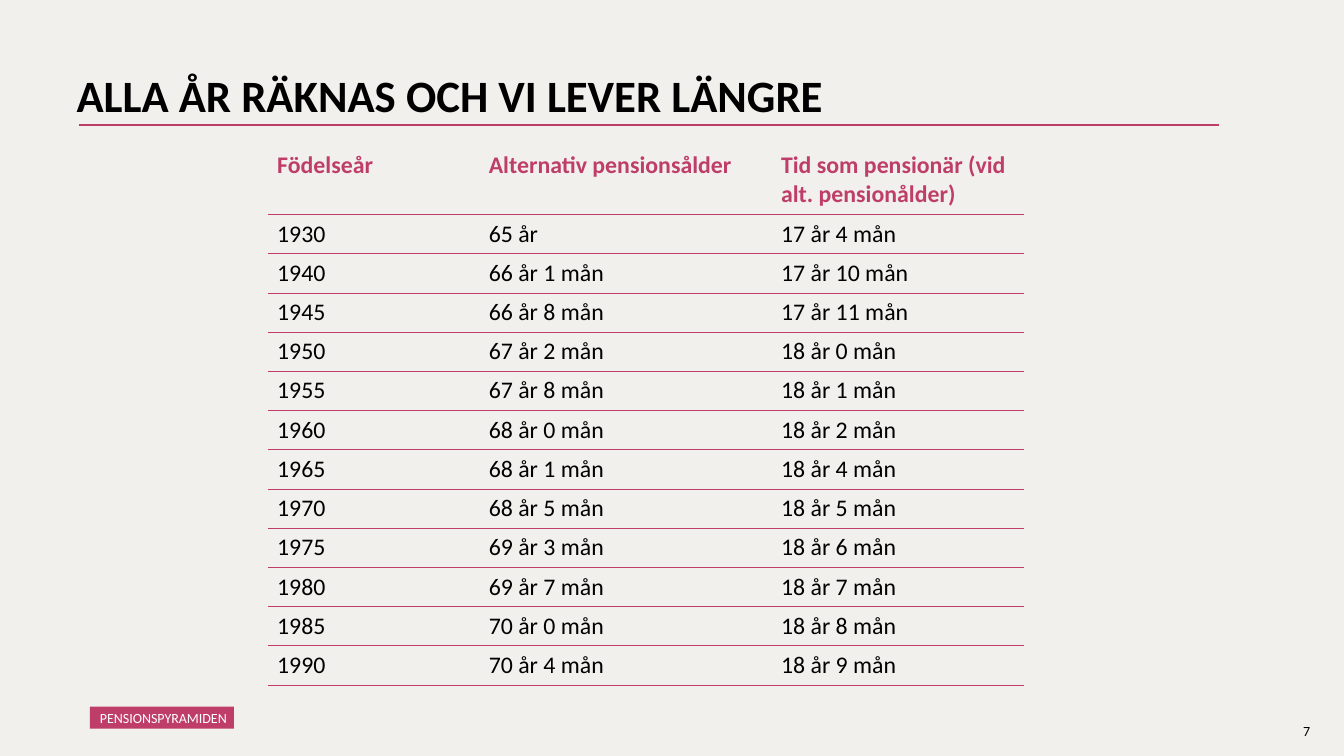
import dataclasses
import typing

import lxml.etree
import pptx
import pptx.dml.color
import pptx.enum.shapes
import pptx.enum.text
import pptx.oxml.ns
import pptx.util

WIDE = pptx.util.Inches(13.333)
HIGH = pptx.util.Inches(7.5)


@dataclasses.dataclass(frozen=True)
class Theme:
    font: str = "Calibri"
    back: str = "F1F0EC"
    rose: str = "BE3E69"
    black: str = "000000"
    white: str = "FFFFFF"
    title: int = 32
    cell: int = 17
    small: int = 10


@dataclasses.dataclass(frozen=True)
class Box:
    """A place on the slide, in percent of its width and height."""
    left: float
    top: float
    width: float
    height: float


@dataclasses.dataclass(frozen=True)
class Label:
    text: str
    box: Box
    size: int
    color: str
    bold: bool = False
    space: float = 1.0
    inset: tuple[float, float, float, float] = (0.1, 0.05, 0.1, 0.05)
    middle: bool = False


class Row(typing.NamedTuple):
    born: str
    age: str
    time: str


THEME = Theme()
TITLE = Label("ALLA ÅR RÄKNAS OCH VI LEVER LÄNGRE", Box(4.95, 9.07, 86.25, 19.33),
              THEME.title, THEME.black, bold=True, space=0.9)
TAG = Label("PENSIONSPYRAMIDEN", Box(6.68, 93.47, 10.73, 2.93), THEME.small,
            THEME.white, space=0.9, inset=(0.1, 0.08, 0.04, 0.05), middle=True)
PAGE = Label("7", Box(96.23, 94.93, 3, 3.6), THEME.small, THEME.black)
RULE = Box(5.85, 16.53, 84.83, 0)
GRID = Box(19.95, 19.33, 56.25, 70.2)
COLS = (15.75, 21.75, 18.75)
HEAD_ROW, BODY_ROW = 9, 5.1
ROWS = (
    Row("Födelseår", "Alternativ pensionsålder", "Tid som pensionär (vid alt. pensionålder)"),
    Row("1930", "65 år", "17 år 4 mån"),
    Row("1940", "66 år 1 mån", "17 år 10 mån"),
    Row("1945", "66 år 8 mån", "17 år 11 mån"),
    Row("1950", "67 år 2 mån", "18 år 0 mån"),
    Row("1955", "67 år 8 mån", "18 år 1 mån"),
    Row("1960", "68 år 0 mån", "18 år 2 mån"),
    Row("1965", "68 år 1 mån", "18 år 4 mån"),
    Row("1970", "68 år 5 mån", "18 år 5 mån"),
    Row("1975", "69 år 3 mån", "18 år 6 mån"),
    Row("1980", "69 år 7 mån", "18 år 7 mån"),
    Row("1985", "70 år 0 mån", "18 år 8 mån"),
    Row("1990", "70 år 4 mån", "18 år 9 mån"),
)


def rgb(color: str) -> pptx.dml.color.RGBColor:
    return pptx.dml.color.RGBColor.from_string(color)


def across(share: float) -> int:
    return round(WIDE * share / 100)


def down(share: float) -> int:
    return round(HIGH * share / 100)


def place(box: Box) -> tuple[int, int, int, int]:
    return across(box.left), down(box.top), across(box.width), down(box.height)


def style(para, size: int, color: str, bold: bool) -> None:
    para.alignment = pptx.enum.text.PP_ALIGN.LEFT
    para.font.name = THEME.font
    para.font.size = pptx.util.Pt(size)
    para.font.bold = bold
    para.font.color.rgb = rgb(color)


def write(shape, label: Label) -> None:
    shape.left, shape.top, shape.width, shape.height = place(label.box)
    frame = shape.text_frame
    frame.text = label.text
    frame.word_wrap = True
    frame.auto_size = pptx.enum.text.MSO_AUTO_SIZE.NONE
    anchor = pptx.enum.text.MSO_ANCHOR
    frame.vertical_anchor = anchor.MIDDLE if label.middle else anchor.TOP
    (frame.margin_left, frame.margin_top, frame.margin_right,
     frame.margin_bottom) = map(pptx.util.Inches, label.inset)
    para = frame.paragraphs[0]
    props = para._p.get_or_add_pPr()
    props.set("marL", "0")
    props.set("indent", "0")
    lxml.etree.SubElement(props, pptx.oxml.ns.qn("a:buNone"))
    para.line_spacing = label.space
    para.space_before = pptx.util.Pt(0)
    style(para, label.size, label.color, label.bold)


def edge(cell, side: str, width: float) -> None:
    """Add one cell border; a width of 0 hides it."""
    name = pptx.oxml.ns.qn
    props = cell._tc.get_or_add_tcPr()
    line = lxml.etree.Element(name(f"a:ln{side}"), w=str(pptx.util.Pt(width)))
    if width:
        fill = lxml.etree.SubElement(line, name("a:solidFill"))
        lxml.etree.SubElement(fill, name("a:srgbClr"), val=THEME.rose)
    else:
        lxml.etree.SubElement(line, name("a:noFill"))
    props.insert("LRTB".index(side), line)


def draw_rule(slide, box: Box) -> None:
    left, top, width, height = place(box)
    rule = slide.shapes.add_connector(pptx.enum.shapes.MSO_CONNECTOR.STRAIGHT,
                                      left, top, left + width, top + height)
    rule.line.color.rgb = rgb(THEME.rose)
    rule.line.width = pptx.util.Pt(1.5)
    lxml.etree.SubElement(rule._element.spPr, pptx.oxml.ns.qn("a:effectLst"))


def draw_table(slide, rows: tuple[Row, ...]) -> None:
    table = slide.shapes.add_table(len(rows), len(COLS), *place(GRID)).table
    table.horz_banding = False
    for col, share in zip(table.columns, COLS):
        col.width = across(share)
    for r, row in enumerate(rows):
        head = r == 0
        table.rows[r].height = down(HEAD_ROW if head else BODY_ROW)
        above = 0 if head else 1 if r == 1 else 0.5
        below = 1 if head else 0.5
        for c, text in enumerate(row):
            cell = table.cell(r, c)
            cell.text = text
            cell.margin_left = cell.margin_right = pptx.util.Inches(0.09)
            cell.margin_top = cell.margin_bottom = pptx.util.Inches(0.05)
            cell.fill.background()
            for side, width in zip("LRTB", (0, 0, above, below)):
                edge(cell, side, width)
            style(cell.text_frame.paragraphs[0], THEME.cell,
                  THEME.rose if head else THEME.black, head)


def main() -> None:
    deck = pptx.Presentation()
    deck.slide_width, deck.slide_height = WIDE, HIGH
    slide = deck.slides.add_slide(deck.slide_layouts[1])
    slide.background.fill.solid()
    slide.background.fill.fore_color.rgb = rgb(THEME.back)

    # Title and the rule below it
    write(slide.shapes.title, TITLE)
    draw_rule(slide, RULE)

    # Pension table
    draw_table(slide, ROWS)

    # Section tag and page number
    tag = slide.placeholders[1]
    tag.fill.solid()
    tag.fill.fore_color.rgb = rgb(THEME.rose)
    write(tag, TAG)
    write(slide.shapes.add_textbox(*place(PAGE.box)), PAGE)

    deck.save("out.pptx")


if __name__ == "__main__":
    main()
